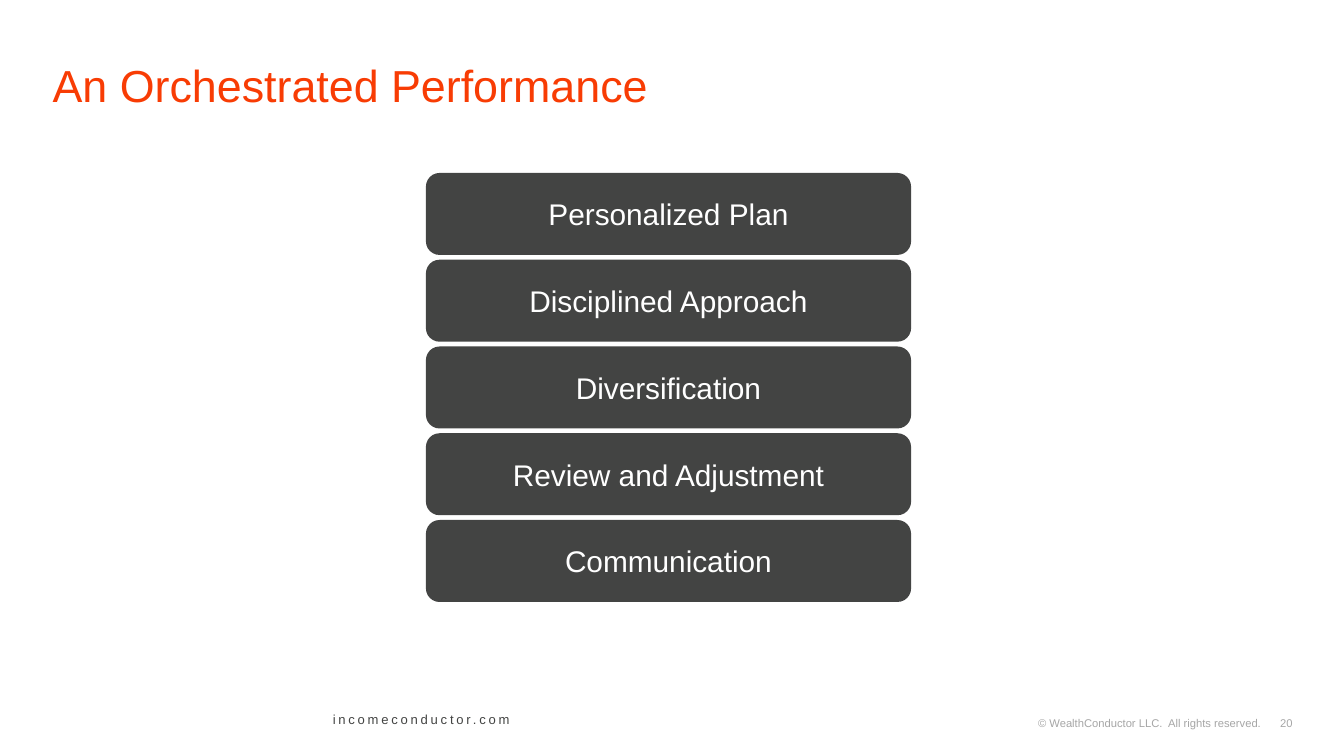
from lxml import etree
from pptx import Presentation
from pptx.dml.color import RGBColor
from pptx.enum import shapes, text
from pptx.oxml.ns import qn
from pptx.util import Cm, Pt

ORANGE = RGBColor(0xF8, 0x3C, 0x04)
CHARCOAL = RGBColor(0x43, 0x44, 0x43)
GREY = RGBColor(0xA6, 0xA6, 0xA6)
WHITE = RGBColor(0xFF, 0xFF, 0xFF)

STEPS = [
    "Personalized Plan",
    "Disciplined Approach",
    "Diversification",
    "Review and Adjustment",
    "Communication",
]


def style(p, size, color, align=text.PP_ALIGN.LEFT):
    p.alignment = align
    p.font.name = "Arial"
    p.font.size = Pt(size)
    p.font.color.rgb = color


def add_right_tabs(p, positions):
    tabs = etree.SubElement(p._p.get_or_add_pPr(), qn("a:tabLst"))
    for pos in positions:
        etree.SubElement(tabs, qn("a:tab"), pos=str(pos), algn="r")


def place_title(slide, left, top, width, height):
    title = slide.shapes.title
    title.left, title.top, title.width, title.height = left, top, width, height
    tf = title.text_frame
    tf.text = "An Orchestrated Performance"
    tf.auto_size = text.MSO_AUTO_SIZE.NONE
    tf.vertical_anchor = text.MSO_ANCHOR.MIDDLE
    style(tf.paragraphs[0], 24, ORANGE)


def add_step_stack(slide, left, top, width, height, gap=Cm(0.09)):
    """Stack one rounded bar per step, filling the box evenly."""
    bar_height = (height - gap * (len(STEPS) - 1)) // len(STEPS)
    for i, step in enumerate(STEPS):
        sp = slide.shapes.add_shape(
            shapes.MSO_SHAPE.ROUNDED_RECTANGLE,
            left, top + i * (bar_height + gap), width, bar_height)
        sp.shadow.inherit = False
        sp.fill.solid()
        sp.fill.fore_color.rgb = CHARCOAL
        sp.line.fill.background()
        tf = sp.text_frame
        tf.text = step
        tf.vertical_anchor = text.MSO_ANCHOR.MIDDLE
        style(tf.paragraphs[0], 16, WHITE, text.PP_ALIGN.CENTER)


def add_footer(slide, left, top, width, height):
    site = slide.shapes.add_textbox(left, top, Cm(3.96), height)
    p = site.text_frame.paragraphs[0]
    r = p.add_run()
    r.text = "incomeconductor.com"
    style(p, 7, CHARCOAL)
    r.font._element.set("spc", "150")

    notice_left = left + Cm(6)
    notice = slide.shapes.add_textbox(
        notice_left, top + Cm(0.08), left + width - notice_left, Cm(0.51))
    tf = notice.text_frame
    tf.word_wrap = True
    p = tf.paragraphs[0]
    p.text = "\t© WealthConductor LLC.  All rights reserved.\t20"
    add_right_tabs(p, [Cm(11.54), Cm(12.14)])
    style(p, 6, GREY)


def main():
    prs = Presentation()
    prs.slide_width, prs.slide_height = Cm(25.4), Cm(14.29)
    slide = prs.slides.add_slide(prs.slide_layouts[5])
    place_title(slide, Cm(0.74), Cm(0.74), Cm(23.77), Cm(1.7))
    add_step_stack(slide, Cm(8.05), Cm(3.27), Cm(9.17), Cm(8.11))
    add_footer(slide, Cm(6.04), Cm(13.33), Cm(18.7), Cm(0.56))
    prs.save("out.pptx")


if __name__ == "__main__":
    main()
